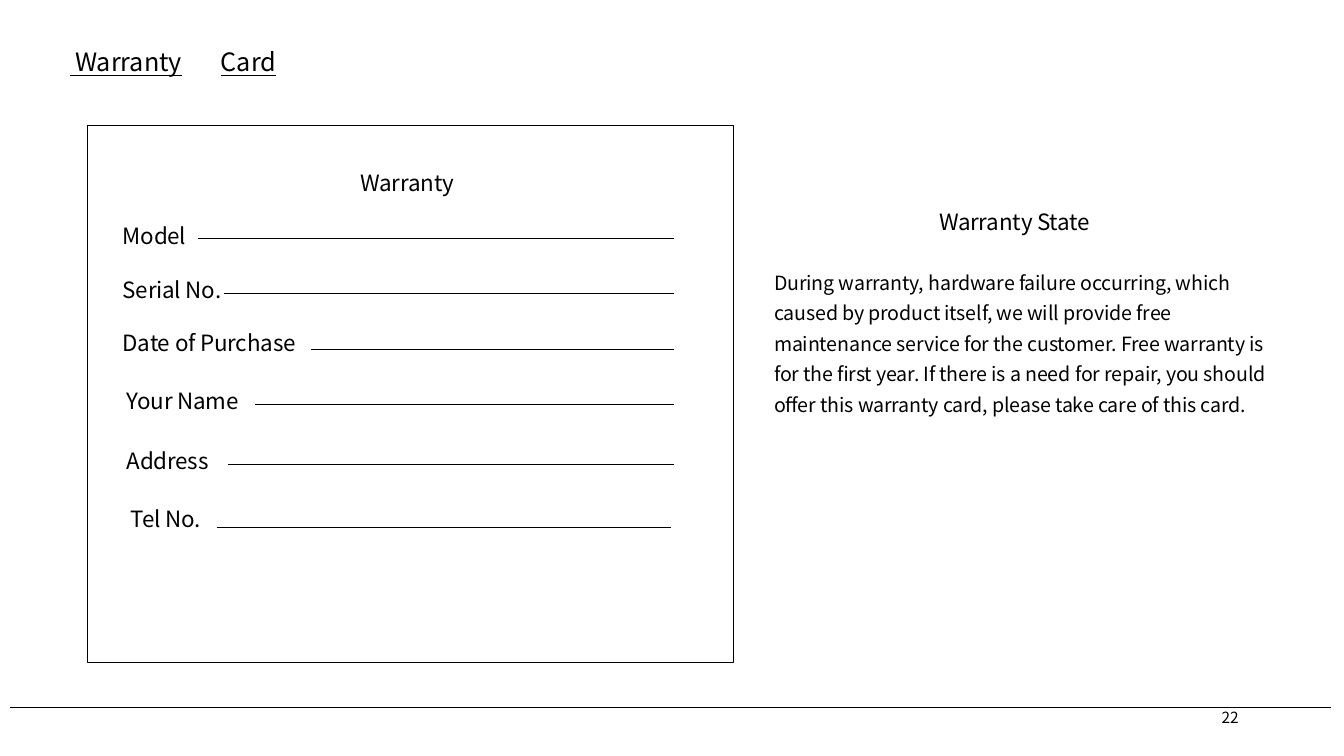
from pptx import Presentation
from pptx.dml.color import RGBColor
from pptx.enum.shapes import MSO_CONNECTOR, MSO_SHAPE
from pptx.enum.text import MSO_ANCHOR
from pptx.oxml.ns import qn
from pptx.util import Pt
from lxml.etree import SubElement

INK = {"black": "000000"}
FONT = "Noto Sans CJK SC"
STATE = (
    "During warranty, hardware failure occurring, which caused by product "
    "itself, we will provide free maintenance service for the customer. Free "
    "warranty is for the first year. If there is a need for repair, you should "
    "offer this warranty card, please take care of this card."
)
FIELDS = [
    ("Model", 87.7, 158.9, 52, 141.7, 170.4),
    ("Serial No.", 87.7, 197.1, 72, 160, 209.5),
    ("Date of Purchase", 87.7, 235.2, 131, 222.3, 249.3),
    ("Your Name", 90.5, 276.3, 86, 182.3, 288.8),
    ("Address", 90.5, 319.5, 72, 163, 331.9),
    ("Tel No.", 93.3, 361, 72, 154.9, 376.7),
]
END = 481.5
TEXTS = [
    (" Warranty\tCard", 49.7, 33.1, 860.4, 21.6, dict(size=18, under=True, gap=0)),
    ("Warranty", 257.5, 120.5, 72, 21, {}),
    ("Warranty State", 670.8, 149, 116, 21, {}),
    (STATE, 552.9, 188.2, 352.8, 133.2, dict(size=14, lead=1.3)),
    ("22", 872.6, 505.5, 18, 13, dict(size=11, gap=0)),
]


def write(page, text, left, top, wide, high, size=16, under=None, gap=-10, lead=None):
    """Place one text box with the given format."""
    frame = page.shapes.add_textbox(Pt(left), Pt(top), Pt(wide), Pt(high)).text_frame
    frame.word_wrap = True
    frame.vertical_anchor = MSO_ANCHOR.TOP
    frame.margin_left = frame.margin_right = 0
    frame.margin_top = frame.margin_bottom = 0
    para = frame.paragraphs[0]
    if lead:
        para.line_spacing = lead
    run = para.add_run()
    run.text = text
    font = run.font
    font.name, font.size, font.underline = FONT, Pt(size), under
    font.color.rgb = RGBColor.from_string(INK["black"])
    if gap:
        run._r.get_or_add_rPr().set("spc", str(gap))


def rule(page, left, right, y):
    """Draw one thin level line."""
    line = page.shapes.add_connector(
        MSO_CONNECTOR.STRAIGHT, Pt(left), Pt(y), Pt(right), Pt(y)
    )
    line.line.width = Pt(0.6)
    line.line.color.rgb = RGBColor.from_string(INK["black"])
    SubElement(line._element.spPr, qn("a:effectLst"))


def main():
    """Build the warranty card slide."""
    deck = Presentation()
    deck.slide_width, deck.slide_height = Pt(960), Pt(540)
    page = deck.slides.add_slide(deck.slide_layouts[6])
    card = page.shapes.add_shape(
        MSO_SHAPE.RECTANGLE, Pt(62.3), Pt(89.7), Pt(461.8), Pt(383.5)
    )
    card.shadow.inherit = False
    card.fill.background()
    card.line.width = Pt(0.96)
    card.line.color.rgb = RGBColor.from_string(INK["black"])
    rule(page, 7.2, 950.4, 505.4)
    for text, left, top, wide, high, form in TEXTS:
        write(page, text, left, top, wide, high, **form)
    for label, left, top, wide, start, y in FIELDS:
        write(page, label, left, top, wide, 21)
        rule(page, start, END if label != "Tel No." else 479.5, y)
    deck.save("out.pptx")


if __name__ == "__main__":
    main()
